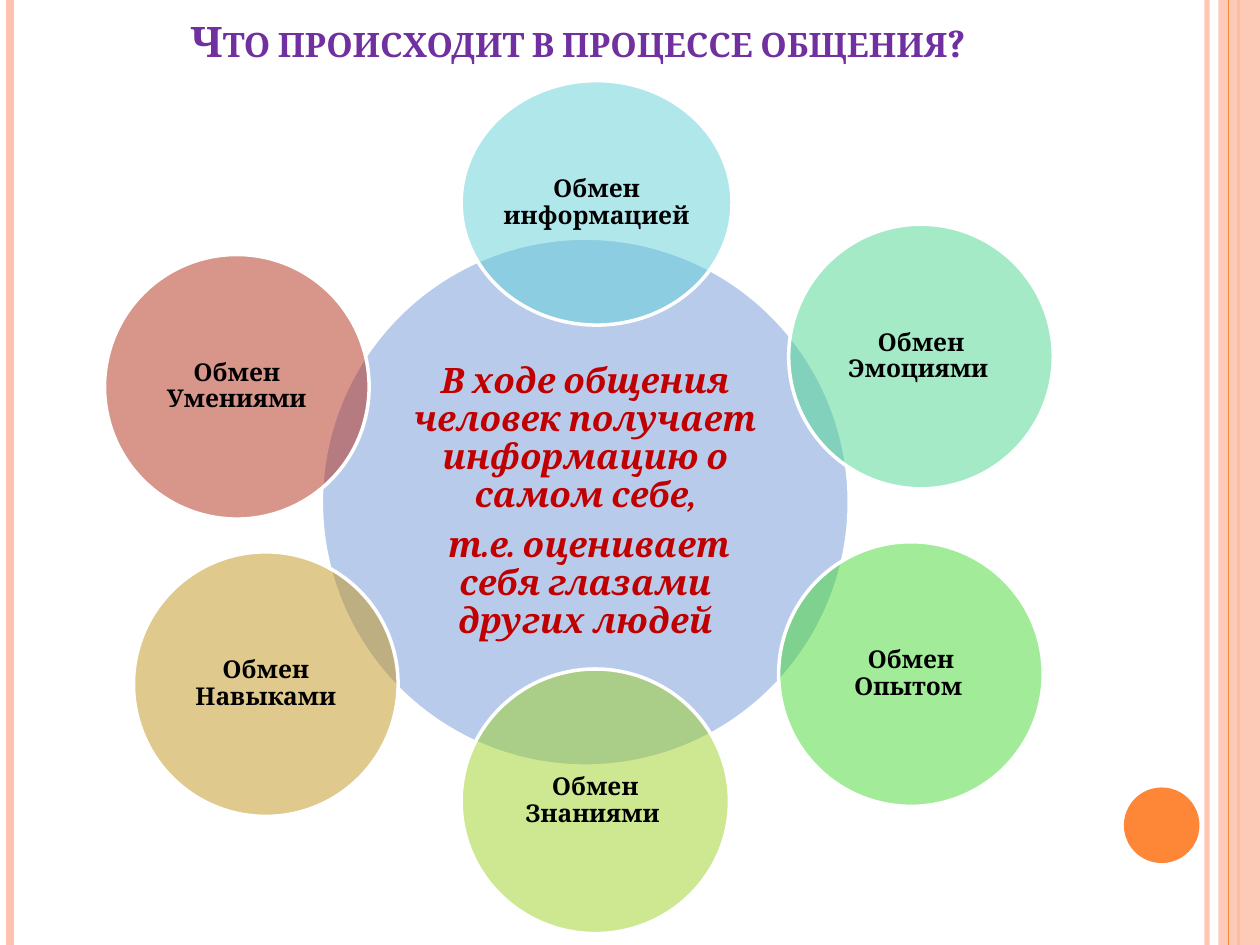
from pptx import Presentation
from pptx.dml.color import RGBColor
from pptx.enum.shapes import MSO_CONNECTOR as Connector, MSO_SHAPE as Shape
from pptx.enum.text import MSO_ANCHOR as Anchor, PP_ALIGN as Align
from pptx.oxml.ns import qn
from pptx.util import Inches, Pt
from lxml.etree import SubElement

COLORS = {
    "peach": "FEC3AE", "orange": "FE8637", "white": "FFFFFF",
    "purple": "7030A0", "red": "C00000", "black": "000000",
    "blue": "7598D9", "cyan": "60D0D8", "mint": "4AD78E", "green": "45D834",
    "lime": "9CD224", "gold": "C3951C", "brick": "B32C16",
}
TITLE = [("Что происходит в процессе общения", 24), ("?", 28)]
CENTER_TEXT = [
    "В ходе общения человек получает информацию о самом себе,",
    " т.е. оценивает себя глазами других людей",
]
EXCHANGES = [
    ("Обмен информацией", "cyan", (3.66, 0.64, 2.15, 1.94)),
    ("Обмен Эмоциями ", "mint", (6.26, 1.78, 2.1, 2.1)),
    ("Обмен Опытом ", "green", (6.18, 4.3, 2.1, 2.1)),
    ("Обмен Знаниями ", "lime", (3.66, 5.31, 2.13, 2.1)),
    ("Обмен Навыками", "gold", (1.06, 4.38, 2.1, 2.1)),
    ("Обмен Умениями", "brick", (0.83, 2.02, 2.1, 2.1)),
]
RAILS_BELOW = [(9.58, "peach", 3, 93), (0.08, "peach", 4.5, 100), (9.83, "orange", 1.5, 100)]
RAILS_ABOVE = [(9.75, "orange", 0.75, 100)]

deck = Presentation()
deck.slide_width, deck.slide_height = Inches(10), Inches(7.5)
page = deck.slides.add_slide(deck.slide_layouts[6])


def paint(color_format, name):
    color_format.rgb = RGBColor.from_string(COLORS[name])


def set_opacity(shape, percent):
    if percent < 100:
        color = next(shape._element.spPr.iter(qn("a:srgbClr")))
        SubElement(color, qn("a:alpha")).set("val", str(percent * 1000))


def add_rail(x, color, width, opacity):
    rail = page.shapes.add_connector(
        Connector.STRAIGHT, Inches(x), 0, Inches(x), deck.slide_height)
    paint(rail.line.color, color)
    rail.line.width = Pt(width)
    set_opacity(rail, opacity)
    SubElement(rail._element.spPr, qn("a:effectLst"))


def add_block(kind, bounds, color, opacity=100, outline=None):
    block = page.shapes.add_shape(kind, *map(Inches, bounds))
    block.shadow.inherit = False
    block.fill.solid()
    paint(block.fill.fore_color, color)
    set_opacity(block, opacity)
    if outline:
        paint(block.line.color, outline)
        block.line.width = Pt(2)
    else:
        block.line.fill.background()
    return block


def write(box, paragraphs, color, italic=False, small_caps=False, inset=0.02,
          anchor=Anchor.MIDDLE, line_spacing=1, space_after=0):
    frame = box.text_frame
    frame.word_wrap = True
    frame.vertical_anchor = anchor
    frame.margin_left = frame.margin_right = Inches(inset)
    frame.margin_top = frame.margin_bottom = Inches(inset)
    for index, runs in enumerate(paragraphs):
        para = frame.add_paragraph() if index else frame.paragraphs[0]
        para.alignment = Align.CENTER
        para.line_spacing = line_spacing
        para.space_after = Pt(space_after)
        for text, size in runs:
            span = para.add_run()
            span.text = text
            span.font.name = "Cambria"
            span.font.size = Pt(size)
            span.font.bold = True
            span.font.italic = italic
            paint(span.font.color, color)
            if small_caps:
                span.font._element.set("cap", "small")


for rail in RAILS_BELOW:
    add_rail(*rail)
add_block(Shape.RECTANGLE, (9.67, 0, 0.33, 7.5), "peach", opacity=87)
for rail in RAILS_ABOVE:
    add_rail(*rail)
add_block(Shape.OVAL, (8.92, 6.25, 0.6, 0.6), "orange")

title = page.shapes.add_textbox(*map(Inches, (0.43, -0.97, 8.31, 1.55)))
write(title, [TITLE], "purple", small_caps=True, inset=0.05, anchor=Anchor.BOTTOM)

center = add_block(Shape.OVAL, (2.55, 1.89, 4.19, 4.19), "blue", 50, "white")
write(center, [[(text, 20)] for text in CENTER_TEXT], "red", italic=True,
      inset=0.03, line_spacing=0.9, space_after=7)

for label, color, bounds in EXCHANGES:
    circle = add_block(Shape.OVAL, bounds, color, 50, "white")
    write(circle, [[(label, 14)]], "black", line_spacing=0.9, space_after=5)

deck.save("out.pptx")
